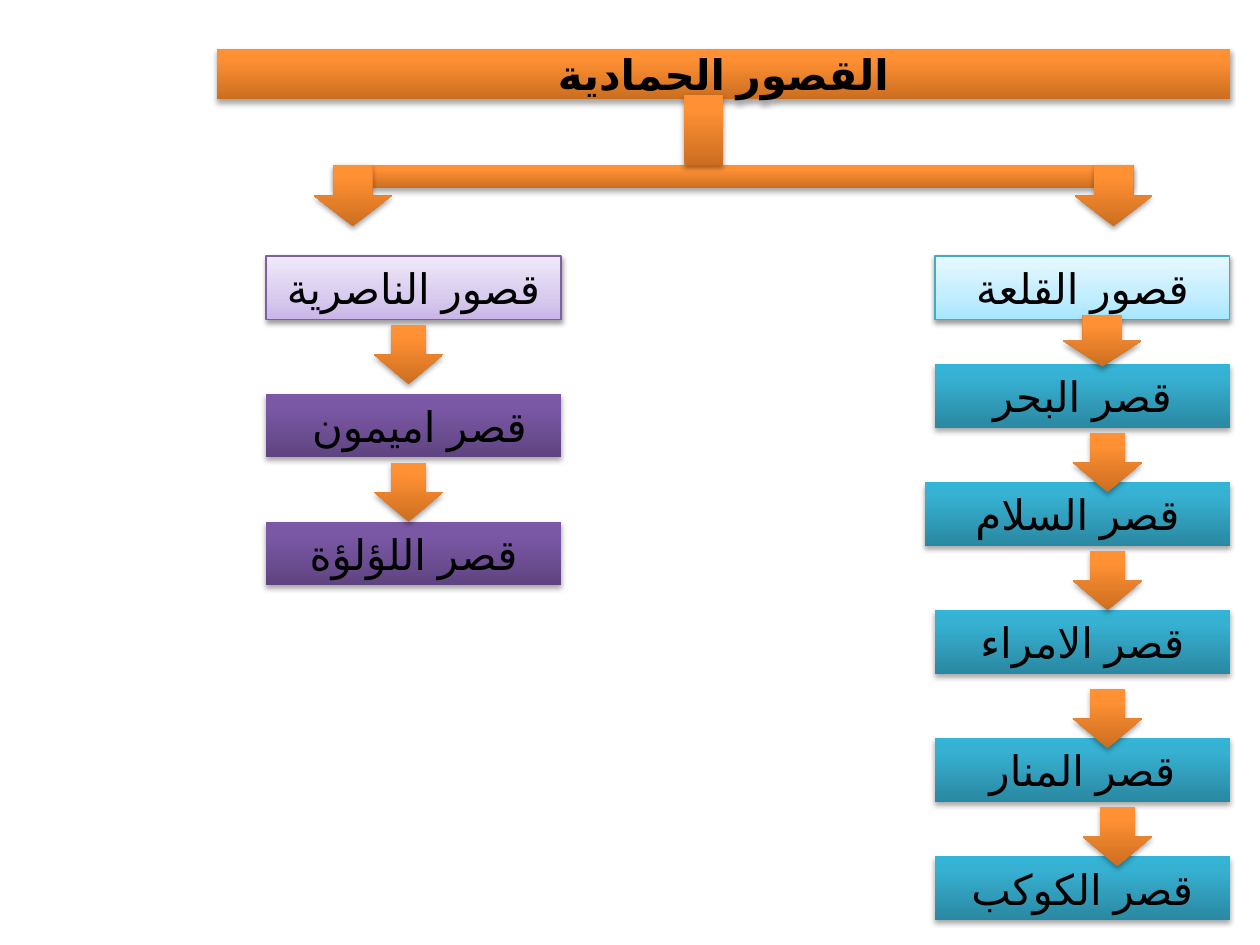
from lxml import etree
from pptx import Presentation
from pptx.dml.color import RGBColor
from pptx.enum import lang, shapes, text
from pptx.oxml import ns
from pptx.util import Pt

BLACK = RGBColor(0x00, 0x00, 0x00)
PURPLE_LINE = RGBColor(0x7D, 0x60, 0xA0)
TEAL_LINE = RGBColor(0x46, 0xAA, 0xC5)
ORANGE = ((0, RGBColor(0xCC, 0x6E, 0x20)), (80, RGBColor(0xFF, 0x90, 0x34)),
          (100, RGBColor(0xFF, 0x91, 0x36)))
TEAL = ((0, RGBColor(0x2A, 0x88, 0xA2)), (80, RGBColor(0x37, 0xB1, 0xD2)),
        (100, RGBColor(0x34, 0xB4, 0xD6)))
PURPLE = ((0, RGBColor(0x5F, 0x44, 0x80)), (80, RGBColor(0x7B, 0x58, 0xA6)),
          (100, RGBColor(0x7C, 0x57, 0xA8)))
PALE_TEAL = ((0, RGBColor(0xA7, 0xE6, 0xFF)), (35, RGBColor(0xC1, 0xED, 0xFF)),
             (100, RGBColor(0xE7, 0xF8, 0xFF)))
PALE_PURPLE = ((0, RGBColor(0xC9, 0xB5, 0xE8)), (35, RGBColor(0xD8, 0xCB, 0xEE)),
               (100, RGBColor(0xF0, 0xEA, 0xF9)))

RECTANGLE = shapes.MSO_SHAPE.RECTANGLE
DOWN_ARROW = shapes.MSO_SHAPE.DOWN_ARROW
BOX_WIDTH, BOX_HEIGHT = 168.5, 36.3
HEADING_TOP = 146.2
ARROW_SIZE = (39.4, 33.8)
BRANCH_ARROW_SIZE = (44.6, 35)
BRANCH_TOP = 94.3


def add_child(parent, tag, **attributes):
    child = etree.SubElement(parent, ns.qn(tag))
    for name, value in attributes.items():
        child.set(name, str(value))
    return child


def apply_gradient(shape, stops):
    shape.fill.gradient()
    shape.fill.gradient_angle = 90
    stop_list = shape._element.spPr.find(".//" + ns.qn("a:gsLst"))
    for stop in list(stop_list):
        stop_list.remove(stop)
    for position, color in stops:
        stop = add_child(stop_list, "a:gs", pos=position * 1000)
        add_child(stop, "a:srgbClr", val=color)


def apply_shadow(shape, opacity, distance):
    shape.shadow.inherit = False
    effects = shape._element.spPr.find(ns.qn("a:effectLst"))
    shadow = add_child(effects, "a:outerShdw", blurRad=Pt(3.1), dist=Pt(distance),
                       dir=5400000, rotWithShape=0)
    color = add_child(shadow, "a:srgbClr", val=BLACK)
    add_child(color, "a:alpha", val=opacity * 1000)


def style_shape(shape, stops, line=None):
    apply_gradient(shape, stops)
    if line is None:
        shape.line.fill.background()
        apply_shadow(shape, 35, 1.8)
    else:
        shape.line.color.rgb = line
        shape.line.width = Pt(0.75)
        apply_shadow(shape, 38, 1.6)


def write_text(shape, content, size=24, bold=False, color=BLACK, font="Arial"):
    frame = shape.text_frame
    frame.word_wrap = True
    frame.auto_size = text.MSO_AUTO_SIZE.NONE
    frame.vertical_anchor = text.MSO_ANCHOR.MIDDLE
    paragraph = frame.paragraphs[0]
    paragraph.alignment = text.PP_ALIGN.CENTER
    paragraph._p.get_or_add_pPr().set("rtl", "1")
    run = paragraph.add_run()
    run.text = content
    run.font.size = Pt(size)
    run.font.bold = bold
    run.font.color.rgb = color
    run.font.name = font
    run.font.language_id = lang.MSO_LANGUAGE_ID.ARABIC_ALGERIA
    add_child(run._r.get_or_add_rPr(), "a:cs", typeface=font)


def add_block(slide, kind, left, top, width, height, stops, line=None):
    shape = slide.shapes.add_shape(kind, Pt(left), Pt(top), Pt(width), Pt(height))
    style_shape(shape, stops, line)
    return shape


def add_title(slide, content):
    title = slide.shapes.title
    title.left, title.top = Pt(123.8), Pt(28.1)
    title.width, title.height = Pt(579.2), Pt(28.4)
    style_shape(title, ORANGE)
    write_text(title, content, bold=True)


def add_branches(slide):
    add_block(slide, RECTANGLE, 190.8, BRANCH_TOP, 456.5, 13, ORANGE)
    for left in (614, 179.3):
        add_block(slide, DOWN_ARROW, left, BRANCH_TOP, *BRANCH_ARROW_SIZE, ORANGE)
    add_block(slide, RECTANGLE, 391, 54.4, 22.3, 39.9, ORANGE)


def add_column(slide, right, heading, heading_stops, heading_line, stops, palaces):
    heading_box = add_block(slide, RECTANGLE, right - BOX_WIDTH, HEADING_TOP,
                            BOX_WIDTH, BOX_HEIGHT, heading_stops, heading_line)
    write_text(heading_box, heading)
    for name, top, width in palaces:
        box = add_block(slide, RECTANGLE, right - width, top, width, BOX_HEIGHT, stops)
        write_text(box, name)


def add_arrows(slide, positions, size=ARROW_SIZE):
    for left, top in positions:
        add_block(slide, DOWN_ARROW, left, top, *size, ORANGE)


def main():
    presentation = Presentation()
    presentation.slide_width, presentation.slide_height = Pt(720), Pt(540)
    slide = presentation.slides.add_slide(presentation.slide_layouts[5])

    add_title(slide, "القصور الحمادية")
    add_branches(slide)
    add_column(slide, 702.8, "قصور القلعة", PALE_TEAL, TEAL_LINE, TEAL, (
        ("قصر البحر", 208.1, BOX_WIDTH),
        ("قصر السلام", 275.6, 174.2),
        ("قصر الامراء", 348.6, BOX_WIDTH),
        ("قصر المنار", 421.8, BOX_WIDTH),
        ("قصر الكوكب", 489.4, BOX_WIDTH),
    ))
    add_column(slide, 320.6, "قصور الناصرية", PALE_PURPLE, PURPLE_LINE, PURPLE, (
        ("قصر اميمون ", 225, BOX_WIDTH),
        ("قصر اللؤلؤة", 298.2, BOX_WIDTH),
    ))
    add_arrows(slide, ((213.8, 185.8), (213.8, 264.4)))
    add_arrows(slide, ((613.2, 247.5), (613.2, 315), (613.2, 393.8), (618.8, 461.3)))
    add_arrows(slide, ((607.6, 180.2),), size=(44.6, 29.3))

    presentation.save("out.pptx")


if __name__ == "__main__":
    main()
